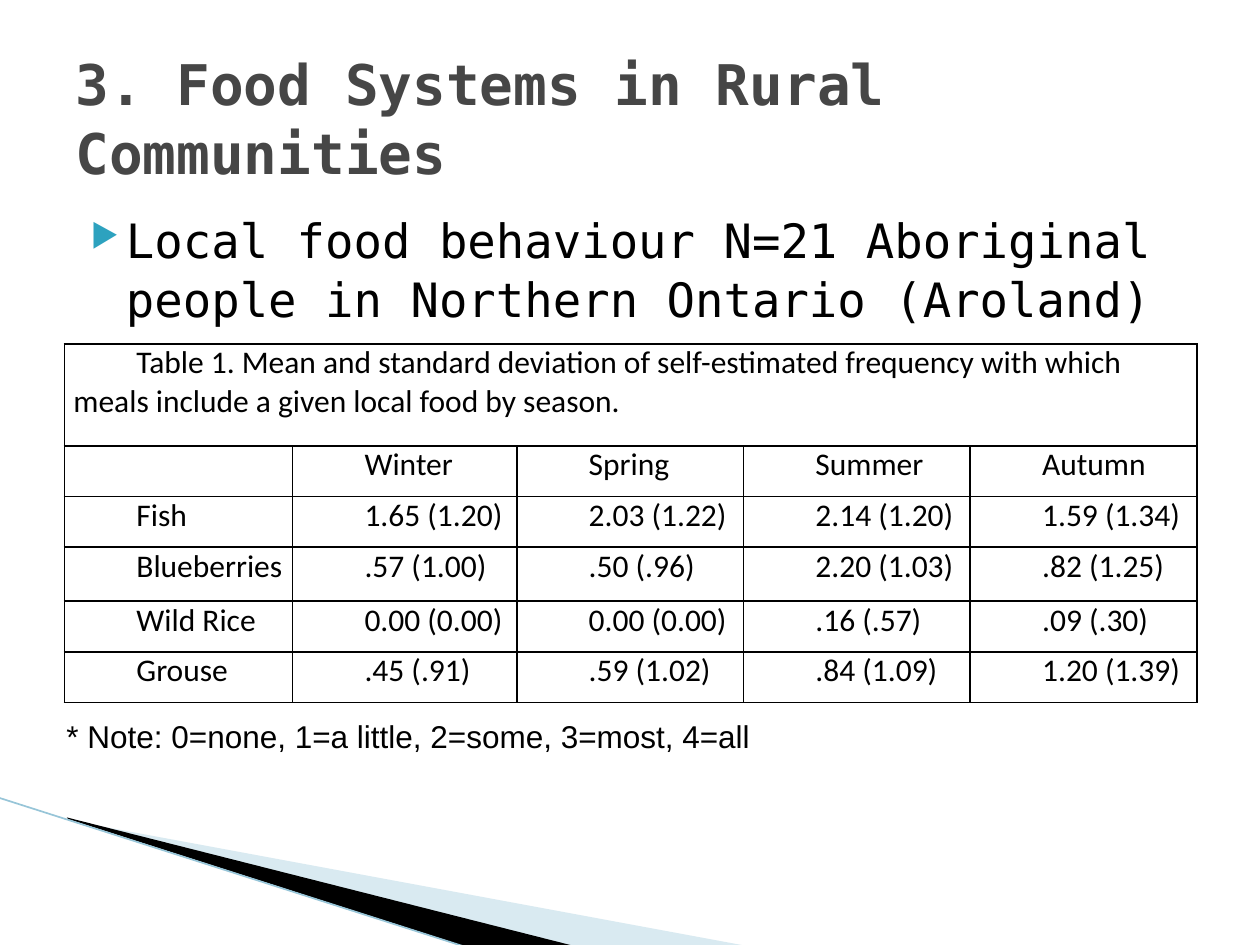
"""Build a slide with a table of local food frequency by season."""
import pptx
import pptx.dml.color
import pptx.enum.shapes
import pptx.enum.text
import pptx.oxml
import pptx.oxml.ns
import pptx.util
from lxml import etree

Cm = pptx.util.Cm
Pt = pptx.util.Pt
NAMESPACE = pptx.oxml.ns.nsdecls("a")

TITLE = "3. Food Systems in Rural Communities"
BODY = "Local food behaviour N=21 Aboriginal people in Northern Ontario (Aroland)"
NOTE = "* Note: 0=none, 1=a little, 2=some, 3=most, 4=all"
CAPTION = ("Table 1. Mean and standard deviation of self-estimated frequency "
           "with which meals include a given local food by season.")
ROWS = [
    (CAPTION, "", "", "", ""),
    ("", "Winter", "Spring", "Summer", "Autumn"),
    ("Fish", "1.65 (1.20)", "2.03 (1.22)", "2.14 (1.20)", "1.59 (1.34)"),
    ("Blueberries", ".57 (1.00)", ".50 (.96)", "2.20 (1.03)", ".82 (1.25)"),
    ("Wild Rice", "0.00 (0.00)", "0.00 (0.00)", ".16 (.57)", ".09 (.30)"),
    ("Grouse", ".45 (.91)", ".59 (1.02)", ".84 (1.09)", "1.20 (1.39)"),
]
COLUMN_WIDTHS = (4.6, 4.52, 4.57, 4.57, 4.57)
ROW_HEIGHTS = (2.06, 1.02, 1.02, 1.09, 1.02, 1.02)
WEDGES = [
    ([(1.4, 16.54), (15.11, 19.08), (11.58, 19.08), (1.4, 16.51)], "A0CBDC", 40),
    ([(1.35, 16.48), (11.61, 19.08), (9.45, 19.1), (1.37, 16.51)], "000000", 100),
]
EDGE = (-0.03, 16.08, 9.42, 19.1)
FORMATS = {
    "title": {"name": "DejaVu Sans Mono", "size": Pt(32), "bold": True, "color": "464646"},
    "body": {"name": "DejaVu Sans Mono", "size": Pt(27), "color": "000000"},
    "table": {"name": "Calibri", "size": Pt(18), "color": "000000"},
    "note": {"name": "Arial", "size": Pt(18), "color": "000000"},
}


def rgb(value):
    return pptx.dml.color.RGBColor.from_string(value)


def add_xml(parent, markup, index=None):
    element = pptx.oxml.parse_xml(markup.replace(">", f" {NAMESPACE}>", 1)
                                  if "/>" not in markup.split(">")[0] + ">"
                                  else markup.replace("/>", f" {NAMESPACE}/>", 1))
    parent.insert(len(parent) if index is None else index, element)


def write(paragraph, text, style):
    run = paragraph.add_run()
    run.text = text
    for attribute, value in FORMATS[style].items():
        if attribute == "color":
            run.font.color.rgb = rgb(value)
        else:
            setattr(run.font, attribute, value)


def add_text(slide, box, text, style, **frame_values):
    frame = slide.shapes.add_textbox(*map(Cm, box)).text_frame
    for attribute, value in {"word_wrap": True, **frame_values}.items():
        setattr(frame, attribute, value)
    paragraph = frame.paragraphs[0]
    write(paragraph, text, style)
    return paragraph


def add_wedges(slide):
    for points, color, opacity in WEDGES:
        corners = [(Cm(x), Cm(y)) for x, y in points]
        builder = slide.shapes.build_freeform(*corners[0])
        builder.add_line_segments(corners[1:], close=True)
        shape = builder.convert_to_shape()
        shape.shadow.inherit = False
        shape.line.fill.background()
        shape.fill.solid()
        shape.fill.fore_color.rgb = rgb(color)
        if opacity < 100:
            color_element = shape.fill._xPr.find(".//" + pptx.oxml.ns.qn("a:srgbClr"))
            add_xml(color_element, f'<a:alpha val="{opacity * 1000}"/>')
    edge = slide.shapes.add_connector(pptx.enum.shapes.MSO_CONNECTOR.STRAIGHT, *map(Cm, EDGE))
    edge.line.width = Pt(0.95)
    edge.line.color.rgb = rgb("97C5D8")
    etree.SubElement(edge._element.spPr, pptx.oxml.ns.qn("a:effectLst"))


def add_body(slide):
    paragraph = add_text(slide, (1.27, 4.11, 22.86, 12.57), BODY, "body")
    paragraph.line_spacing = 1.03
    properties = paragraph._p.get_or_add_pPr()
    properties.set("marL", str(Cm(1.02)))
    properties.set("indent", str(Cm(-0.71)))
    for markup in ('<a:buClr><a:srgbClr val="2DA2BF"/></a:buClr>',
                   '<a:buSzPct val="68000"/>', '<a:buChar char="▶"/>'):
        add_xml(properties, markup)


def add_food_table(slide):
    table = slide.shapes.add_table(len(ROWS), len(COLUMN_WIDTHS), Cm(1.3), Cm(6.93),
                                   Cm(sum(COLUMN_WIDTHS)), Cm(sum(ROW_HEIGHTS))).table
    table.first_row = table.horz_banding = False
    for column, width in zip(table.columns, COLUMN_WIDTHS):
        column.width = Cm(width)
    for row, height in zip(table.rows, ROW_HEIGHTS):
        row.height = Cm(height)
    table.cell(0, 0).merge(table.cell(0, len(COLUMN_WIDTHS) - 1))
    margins = {"margin_left": Cm(0.18), "margin_right": Cm(0.18),
               "margin_top": 0, "margin_bottom": 0}
    for row, texts in zip(table.rows, ROWS):
        for cell, text in zip(row.cells, texts):
            for attribute, value in margins.items():
                setattr(cell, attribute, value)
            cell.fill.background()
            for index, side in enumerate("LRTB"):
                add_xml(cell._tc.get_or_add_tcPr(),
                        f'<a:ln{side} w="{Pt(1)}"><a:solidFill><a:srgbClr val="000000"/>'
                        f'</a:solidFill></a:ln{side}>', index)
            if text:
                paragraph = cell.text_frame.paragraphs[0]
                paragraph._p.get_or_add_pPr().set("indent", str(Cm(1.27)))
                write(paragraph, text, "table")


def main():
    presentation = pptx.Presentation()
    presentation.slide_width, presentation.slide_height = Cm(25.4), Cm(19.05)
    slide = presentation.slides.add_slide(presentation.slide_layouts[6])
    add_wedges(slide)
    add_body(slide)
    title = add_text(slide, (1.27, 0.76, 22.86, 3.18), TITLE, "title",
                     vertical_anchor=pptx.enum.text.MSO_ANCHOR.MIDDLE)
    title.line_spacing = 1.03
    add_food_table(slide)
    add_text(slide, (1.09, 14.33, 17.2, 1.02), NOTE, "note",
             auto_size=pptx.enum.text.MSO_AUTO_SIZE.SHAPE_TO_FIT_TEXT)
    presentation.save("out.pptx")


if __name__ == "__main__":
    main()
